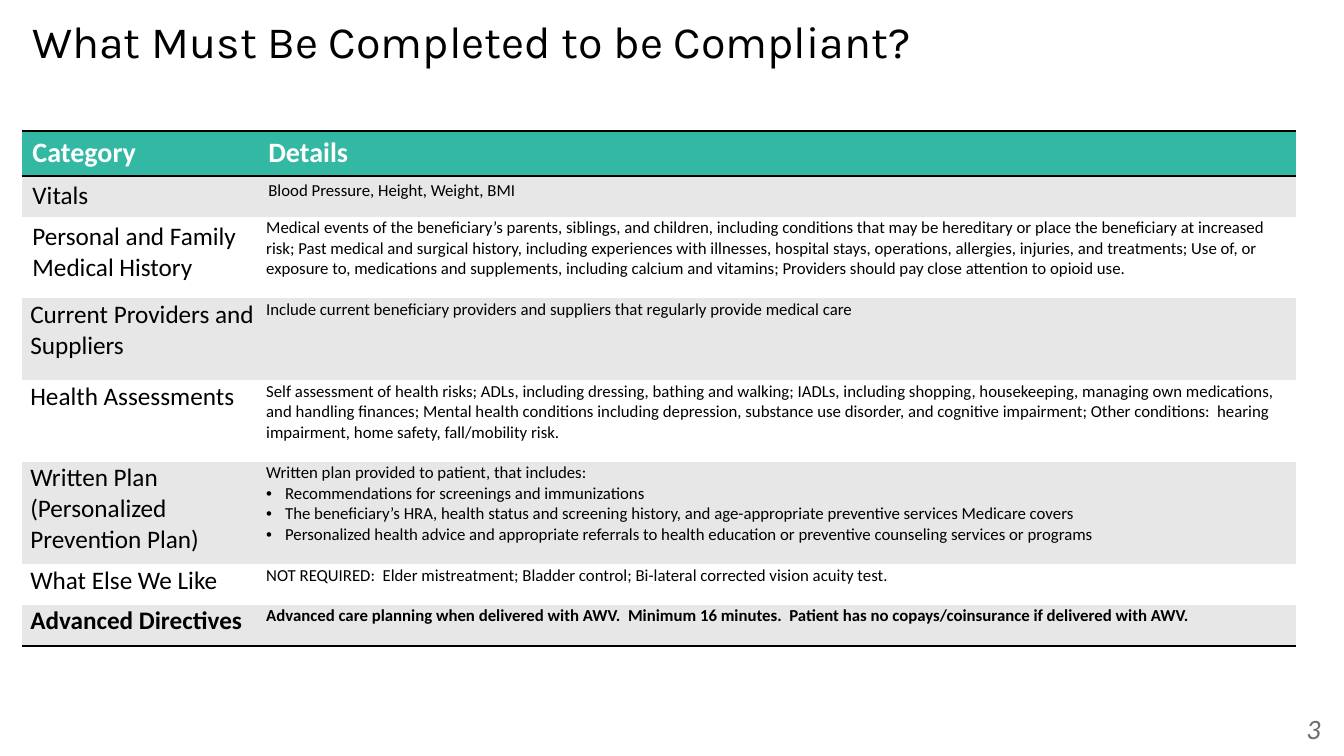
from lxml.etree import SubElement
from pptx import Presentation
from pptx.dml.color import RGBColor
from pptx.enum.text import MSO_ANCHOR, PP_ALIGN
from pptx.oxml.ns import qn
from pptx.util import Pt

BLACK = RGBColor(0x00, 0x00, 0x00)
WHITE = RGBColor(0xFF, 0xFF, 0xFF)
TEAL = RGBColor(0x33, 0xB8, 0xA4)
LIGHT_GRAY = RGBColor(0xE7, 0xE7, 0xE7)
NUMBER_GRAY = RGBColor(0x6D, 0x6D, 0x6C)
PLAIN_TABLE_STYLE = "{2D5ABB26-0587-4C30-8999-92F81FD0307C}"

COLUMN_WIDTHS = (168.5, 740.9)
ROW_HEIGHTS = (32.2, 29.2, 58.4, 58.4, 58.4, 73, 29.2, 29.2)
ROWS = (
    ("Category", "Details"),
    ("Vitals", "Blood Pressure, Height, Weight, BMI"),
    ("Personal and Family Medical History",
     "Medical events of the beneficiary’s parents, siblings, and children, including conditions "
     "that may be hereditary or place the beneficiary at increased risk; Past medical and surgical "
     "history, including experiences with illnesses, hospital stays, operations, allergies, "
     "injuries, and treatments; Use of, or exposure to, medications and supplements, including "
     "calcium and vitamins; Providers should pay close attention to opioid use."),
    ("Current Providers and Suppliers",
     "Include current beneficiary providers and suppliers that regularly provide medical care"),
    ("Health Assessments",
     "Self assessment of health risks; ADLs, including dressing, bathing and walking; IADLs, "
     "including shopping, housekeeping, managing own medications, and handling finances; Mental "
     "health conditions including depression, substance use disorder, and cognitive impairment; "
     "Other conditions:  hearing impairment, home safety, fall/mobility risk."),
    ("Written Plan (Personalized Prevention Plan)",
     "Written plan provided to patient, that includes:\n"
     "Recommendations for screenings and immunizations\n"
     "The beneficiary’s HRA, health status and screening history, and age-appropriate preventive "
     "services Medicare covers\n"
     "Personalized health advice and appropriate referrals to health education or preventive "
     "counseling services or programs"),
    ("What Else We Like",
     "NOT REQUIRED:  Elder mistreatment; Bladder control; Bi-lateral corrected vision acuity test."),
    ("Advanced Directives",
     "Advanced care planning when delivered with AWV.  Minimum 16 minutes.  Patient has no "
     "copays/coinsurance if delivered with AWV."),
)


class ComplianceSlide:
    """Holds the slide and its style, and adds each kind of element."""

    body_font = "Calibri"
    title_font = "Karla"

    def __init__(self, presentation):
        self.slide = presentation.slides.add_slide(presentation.slide_layouts[6])

    def format_runs(self, paragraph, size, color, bold=False, italic=False, font=body_font):
        for run in paragraph.runs:
            run.font.name = font
            run.font.size = Pt(size)
            run.font.bold = bold
            run.font.italic = italic
            run.font.color.rgb = color

    def add_text(self, text, left, top, width, height, size, color,
                 align=PP_ALIGN.LEFT, anchor=MSO_ANCHOR.TOP, line_spacing=1.0, **style):
        shape = self.slide.shapes.add_textbox(Pt(left), Pt(top), Pt(width), Pt(height))
        text_frame = shape.text_frame
        text_frame.word_wrap = True
        text_frame.vertical_anchor = anchor
        text_frame.text = text
        paragraph = text_frame.paragraphs[0]
        paragraph.alignment = align
        paragraph.line_spacing = line_spacing
        self.format_runs(paragraph, size, color, **style)

    def add_border(self, cell, side):
        properties = cell._tc.get_or_add_tcPr()
        line = SubElement(properties, qn(f"a:ln{side}"), w=str(Pt(2)))
        fill = SubElement(line, qn("a:solidFill"))
        SubElement(fill, qn("a:srgbClr"), val=str(BLACK))

    def set_indent(self, paragraph, left, hanging=0.0):
        properties = paragraph._p.get_or_add_pPr()
        properties.set("marL", str(Pt(left)))
        properties.set("indent", str(-Pt(hanging)))
        if hanging:
            SubElement(properties, qn("a:buFont"), typeface="Arial")
            SubElement(properties, qn("a:buChar"), char="•")

    def fill_cell(self, cell, text, size, text_color, fill_color, bold, compact, borders):
        for side in borders:
            self.add_border(cell, side)
        cell.fill.solid()
        cell.fill.fore_color.rgb = fill_color
        cell.text_frame.text = text
        if compact:
            cell.margin_left = cell.margin_right = cell.margin_top = Pt(0.7)
            cell.margin_bottom = Pt(0)
        for index, paragraph in enumerate(cell.text_frame.paragraphs):
            if index:
                self.set_indent(paragraph, 18.5, 13.5)
            elif compact:
                self.set_indent(paragraph, 5)
            self.format_runs(paragraph, size, text_color, bold)

    def add_table(self, rows, left, top):
        frame = self.slide.shapes.add_table(
            len(rows), len(COLUMN_WIDTHS), Pt(left), Pt(top),
            Pt(sum(COLUMN_WIDTHS)), Pt(sum(ROW_HEIGHTS)))
        table = frame.table
        table._tbl.tblPr.find(qn("a:tableStyleId")).text = PLAIN_TABLE_STYLE
        for column, width in zip(table.columns, COLUMN_WIDTHS):
            column.width = Pt(width)
        last = len(rows) - 1
        for row_index, texts in enumerate(rows):
            table.rows[row_index].height = Pt(ROW_HEIGHTS[row_index])
            header = row_index == 0
            fill_color = TEAL if header else LIGHT_GRAY if row_index % 2 else WHITE
            borders = "TB" if header else "B" if row_index == last else ""
            for column_index, text in enumerate(texts):
                self.fill_cell(
                    table.cell(row_index, column_index), text,
                    size=20 if header else (18, 12)[column_index],
                    text_color=WHITE if header else BLACK,
                    fill_color=fill_color,
                    bold=row_index in (0, last),
                    compact=row_index + column_index > 2,
                    borders=borders)


def main():
    presentation = Presentation()
    presentation.slide_width = Pt(960)
    presentation.slide_height = Pt(540)
    slide = ComplianceSlide(presentation)
    slide.add_text("What Must Be Completed to be Compliant?", 16, 14.4, 828, 34.6, 32, BLACK,
                   anchor=MSO_ANCHOR.MIDDLE, line_spacing=0.9, font=slide.title_font)
    slide.add_text("3", 734.4, 504.7, 216, 28.8, 20, NUMBER_GRAY,
                   align=PP_ALIGN.RIGHT, italic=True)
    slide.add_table(ROWS, 16, 93.4)
    presentation.save("out.pptx")


if __name__ == "__main__":
    main()
